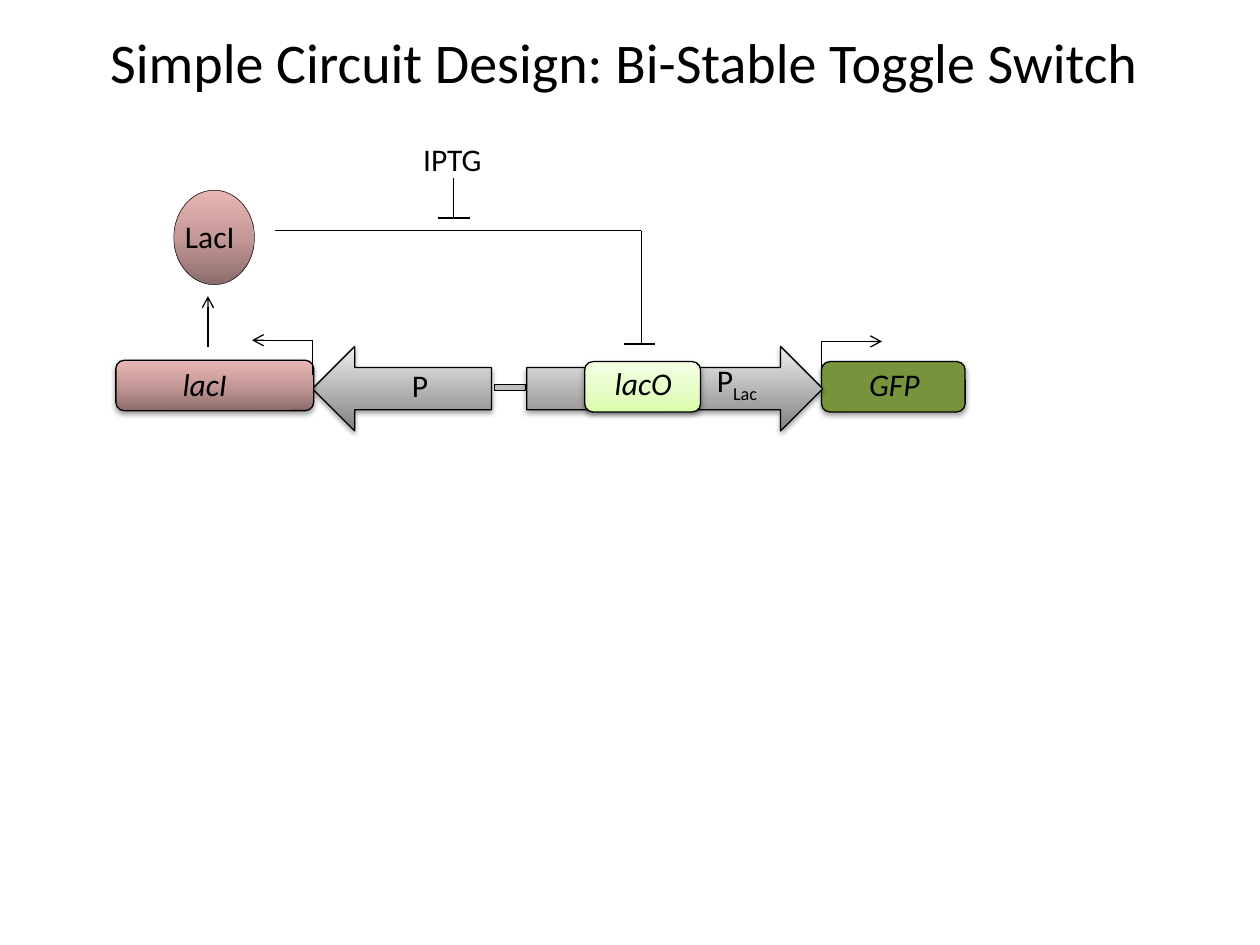
from dataclasses import dataclass
from typing import Optional

from pptx import Presentation
from pptx.dml.color import RGBColor
from pptx.enum.shapes import MSO_CONNECTOR as Connector, MSO_SHAPE as Preset
from pptx.enum.text import MSO_ANCHOR as Anchor, MSO_AUTO_SIZE as AutoSize, PP_ALIGN as Align
from pptx.oxml import parse_xml
from pptx.oxml.ns import nsdecls, qn
from pptx.util import Inches, Pt

FONT = "Calibri"
COLORS = {"black": "000000", "spacer": "BFBFBF", "reporter": "77933C"}
GRADIENTS = {
    "promoter": [(0, "808080"), (100, "EEEEEE")],
    "repressor": [(0, "8A6C6B"), (50, "C59998"), (100, "E9B6B4")],
    "operator": [(0, "DAFDA7"), (35, "E4FCC2"), (100, "F5FFE7")],
}


@dataclass
class Part:
    preset: Preset
    left: float
    top: float
    width: float
    height: float
    fill: str
    line_width: float = 0.75
    shadow: bool = True


@dataclass
class Wire:
    start: tuple[float, float]
    end: tuple[float, float]
    arrow: bool = False


@dataclass
class Label:
    text: str
    left: float
    top: float
    width: float
    italic: bool = False
    subscript: Optional[str] = None


PARTS = [
    Part(Preset.RECTANGLE, 3.92, 3.05, 0.25, 0.05, "spacer", 0.25, False),
    Part(Preset.LEFT_ARROW, 2.48, 2.75, 1.42, 0.67, "promoter"),
    Part(Preset.ROUNDED_RECTANGLE, 0.92, 2.86, 1.57, 0.4, "repressor"),
    Part(Preset.ROUNDED_RECTANGLE, 6.52, 2.87, 1.14, 0.4, "reporter"),
    Part(Preset.OVAL, 1.38, 1.51, 0.64, 0.75, "repressor", 0.25, False),
    Part(Preset.RIGHT_ARROW, 4.18, 2.75, 2.35, 0.67, "promoter"),
    Part(Preset.ROUNDED_RECTANGLE, 4.64, 2.87, 0.92, 0.4, "operator"),
]

WIRES = [
    Wire((2.48, 2.7), (2, 2.7), arrow=True),
    Wire((2.48, 2.7), (2.48, 2.98)),
    Wire((1.65, 2.75), (1.65, 2.35), arrow=True),
    Wire((5.09, 1.83), (5.09, 2.73)),
    Wire((5.09, 1.83), (2.18, 1.83)),
    Wire((5.2, 2.73), (4.95, 2.73)),
    Wire((6.52, 2.71), (7, 2.71), arrow=True),
    Wire((6.52, 2.71), (6.52, 2.99)),
    Wire((3.6, 1.41), (3.6, 1.73)),
    Wire((3.48, 1.73), (3.73, 1.73)),
]

LABELS = [
    Label("GFP", 6.8, 2.85, 0.67, italic=True),
    Label("lacI", 1.35, 2.85, 0.62, italic=True),
    Label("LacI", 1.37, 1.67, 0.6),
    Label("P", 5.59, 2.82, 0.55, subscript="Lac"),
    Label("lacO", 4.78, 2.84, 0.72, italic=True),
    Label("IPTG", 3.26, 1.06, 0.68),
    Label("P", 3.17, 2.86, 0.33),
]


def color(name: str) -> RGBColor:
    return RGBColor.from_string(COLORS[name])


def set_font(paragraph, size: float, italic: bool = False) -> None:
    font = paragraph.font
    font.name, font.size, font.italic = FONT, Pt(size), italic
    font.color.rgb = color("black")


def fill_gradient(shape, name: str) -> None:
    stops = "".join(
        f'<a:gs pos="{position * 1000}"><a:srgbClr val="{value}"/></a:gs>'
        for position, value in GRADIENTS[name]
    )
    gradient = parse_xml(
        f'<a:gradFill {nsdecls("a")} rotWithShape="1"><a:gsLst>{stops}</a:gsLst>'
        '<a:lin ang="16200000" scaled="0"/></a:gradFill>'
    )
    shape.element.spPr.find(qn("a:prstGeom")).addnext(gradient)


def add_shadow(shape) -> None:
    effects = shape.element.spPr.find(qn("a:effectLst"))
    effects.append(parse_xml(
        f'<a:outerShdw {nsdecls("a")} blurRad="40000" dist="20000" dir="5400000" '
        f'rotWithShape="0"><a:srgbClr val="{COLORS["black"]}">'
        '<a:alpha val="38000"/></a:srgbClr></a:outerShdw>'
    ))


def draw_part(slide, part: Part) -> None:
    box = map(Inches, (part.left, part.top, part.width, part.height))
    shape = slide.shapes.add_shape(part.preset, *box)
    if part.fill in GRADIENTS:
        fill_gradient(shape, part.fill)
    else:
        shape.fill.solid()
        shape.fill.fore_color.rgb = color(part.fill)
    shape.line.color.rgb = color("black")
    shape.line.width = Pt(part.line_width)
    shape.shadow.inherit = False
    if part.shadow:
        add_shadow(shape)


def draw_wire(slide, wire: Wire) -> None:
    connector = slide.shapes.add_connector(
        Connector.STRAIGHT, *map(Inches, wire.start + wire.end)
    )
    connector.line.color.rgb = color("black")
    connector.line.width = Pt(0.75)
    if wire.arrow:
        connector.line._get_or_add_ln().append(
            parse_xml(f'<a:tailEnd {nsdecls("a")} type="arrow"/>')
        )
    connector.element.spPr.append(parse_xml(f'<a:effectLst {nsdecls("a")}/>'))


def draw_label(slide, label: Label) -> None:
    box = map(Inches, (label.left, label.top, label.width, 0.4))
    frame = slide.shapes.add_textbox(*box).text_frame
    frame.word_wrap = False
    frame.auto_size = AutoSize.SHAPE_TO_FIT_TEXT
    paragraph = frame.paragraphs[0]
    paragraph.add_run().text = label.text
    set_font(paragraph, 18, label.italic)
    if label.subscript:
        run = paragraph.add_run()
        run.text = label.subscript
        run.font._element.set("baseline", "-25000")


def write_title(slide, text: str) -> None:
    title = slide.shapes.title
    title.left, title.top, title.width, title.height = map(Inches, (0.08, 0.17, 9.75, 0.64))
    frame = title.text_frame
    frame.text = text
    frame.word_wrap = True
    frame.auto_size = AutoSize.NONE
    frame.vertical_anchor = Anchor.TOP
    paragraph = frame.paragraphs[0]
    paragraph.alignment = Align.CENTER
    set_font(paragraph, 32)


def main() -> None:
    presentation = Presentation()
    presentation.slide_width, presentation.slide_height = Inches(10), Inches(7.5)
    slide = presentation.slides.add_slide(presentation.slide_layouts[5])
    write_title(slide, "Simple Circuit Design: Bi-Stable Toggle Switch")
    for part in PARTS:
        draw_part(slide, part)
    for wire in WIRES:
        draw_wire(slide, wire)
    for label in LABELS:
        draw_label(slide, label)
    presentation.save("out.pptx")


if __name__ == "__main__":
    main()
